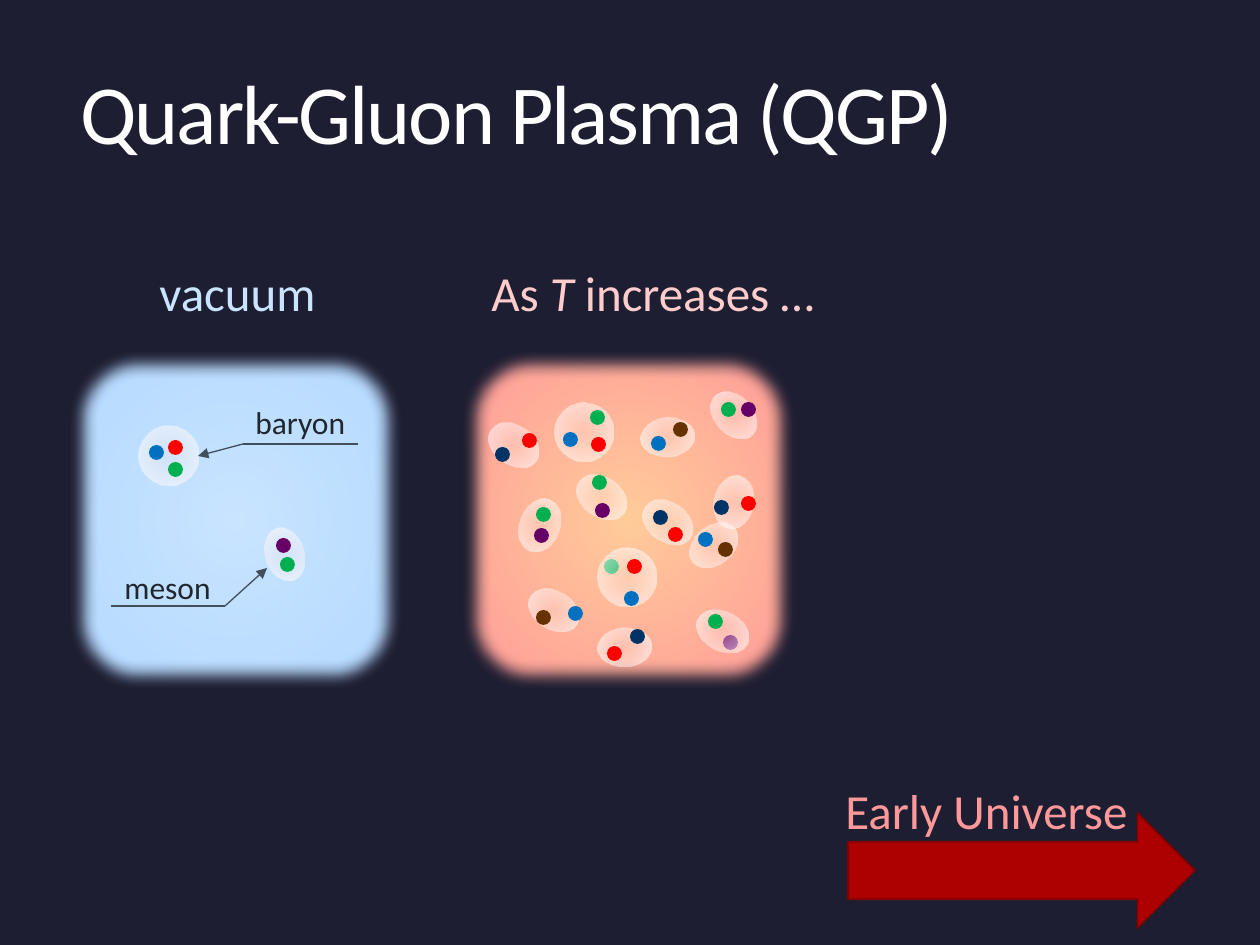
import pptx
import pptx.dml.color
import pptx.enum.shapes
import pptx.enum.text
import pptx.oxml
import pptx.oxml.ns
import pptx.util
from dataclasses import dataclass

PX = 914400 / 126
SHAPE = pptx.enum.shapes.MSO_SHAPE
ANCHOR = pptx.enum.text.MSO_ANCHOR


@dataclass(frozen=True)
class Theme:
    font: str = "Calibri"
    title_size: int = 48
    heading_size: int = 28
    label_size: int = 18
    background: str = "1E1E32"
    title: str = "FFFFFF"
    label: str = "21272E"
    leader: str = "424E5B"
    cold: str = "C9E4FF"
    cold_edge: str = "B3D9FF"
    warm: str = "FFCC99"
    warm_edge: str = "FF9999"
    warm_heading: str = "FFCCCC"
    arrow: str = "AD0101"
    arrow_line: str = "800101"
    hadron: str = "FFEEEE"
    hadron_edge: str = "FFFFFF"
    red: str = "FF0000"
    green: str = "00B050"
    blue: str = "0070C0"
    purple: str = "660066"
    navy: str = "003366"
    brown: str = "663300"


THEME = Theme()
PANEL_SIZE = (334, 340)
BARYON_SIZE = (59, 59)
MESON_SIZE = (39, 54)
QUARK_SIZE = (15, 15)


def emu(*lengths):
    return [round(length * PX) for length in lengths]


def rgb(code):
    return pptx.dml.color.RGBColor.from_string(code)


def add_text(slide, text, box, *, size, color, wrap=False, anchor=ANCHOR.TOP,
             tracking=None, line_spacing=None):
    """Add one paragraph; text is a string or a list of (string, italic) pairs."""
    frame = slide.shapes.add_textbox(*emu(*box)).text_frame
    frame.word_wrap = wrap
    frame.vertical_anchor = anchor
    paragraph = frame.paragraphs[0]
    if line_spacing:
        paragraph.line_spacing = line_spacing
    for content, italic in [(text, False)] if isinstance(text, str) else text:
        run = paragraph.add_run()
        run.text = content
        run.font.name = THEME.font
        run.font.size = pptx.util.Pt(size)
        run.font.italic = italic
        run.font.color.rgb = rgb(color)
        if tracking:
            run.font._element.set("spc", str(round(tracking * 100)))


def add_solid(slide, kind, box, color, outline=None):
    shape = slide.shapes.add_shape(kind, *emu(*box))
    shape.shadow.inherit = False
    shape.fill.solid()
    shape.fill.fore_color.rgb = rgb(color)
    if outline:
        shape.line.color.rgb = rgb(outline)
        shape.line.width = pptx.util.Pt(1)
    else:
        shape.line.fill.background()
    return shape


def add_radial(slide, kind, box, stops):
    """Add a shape shaded outward from its centre by (position, colour, opacity) stops."""
    shape = add_solid(slide, kind, box, stops[0][1])
    stop_xml = "".join(
        f'<a:gs pos="{position * 1000}"><a:srgbClr val="{color}">'
        f'<a:alpha val="{opacity * 1000}"/></a:srgbClr></a:gs>'
        for position, color, opacity in stops)
    gradient = pptx.oxml.parse_xml(
        f'<a:gradFill {pptx.oxml.ns.nsdecls("a")} rotWithShape="1">'
        f'<a:gsLst>{stop_xml}</a:gsLst><a:path path="circle">'
        '<a:fillToRect l="50000" t="50000" r="50000" b="50000"/></a:path></a:gradFill>')
    properties = shape._element.spPr
    properties.replace(properties.find(pptx.oxml.ns.qn("a:solidFill")), gradient)
    return shape


def add_line(slide, start, end, arrowhead=False):
    line = slide.shapes.add_connector(
        pptx.enum.shapes.MSO_CONNECTOR.STRAIGHT, *emu(*start, *end))
    line.line.color.rgb = rgb(THEME.leader)
    line.line.width = pptx.util.Pt(0.75)
    namespace = pptx.oxml.ns.nsdecls("a")
    if arrowhead:
        line.line._get_or_add_ln().append(
            pptx.oxml.parse_xml(f'<a:tailEnd {namespace} type="triangle"/>'))
    line._element.spPr.append(pptx.oxml.parse_xml(f"<a:effectLst {namespace}/>"))


def add_panel(slide, origin, center, edge):
    panel = add_radial(slide, SHAPE.ROUNDED_RECTANGLE, (*origin, *PANEL_SIZE),
                       [(0, center, 100), (98, edge, 100)])
    effects = panel._element.spPr.find(pptx.oxml.ns.qn("a:effectLst"))
    effects.append(pptx.oxml.parse_xml(
        f'<a:softEdge {pptx.oxml.ns.nsdecls("a")} rad="112500"/>'))


def add_hadron(slide, origin, place, size, rotation=0):
    left, top = origin[0] + place[0], origin[1] + place[1]
    shape = add_radial(slide, SHAPE.OVAL, (left, top, *size),
                       [(0, THEME.hadron, 25), (100, THEME.hadron_edge, 70)])
    shape.rotation = rotation


def add_quarks(slide, origin, places_by_color):
    for color, places in places_by_color.items():
        for x, y in places:
            add_solid(slide, SHAPE.OVAL,
                      (origin[0] + x, origin[1] + y, *QUARK_SIZE), color)


def add_callout(slide, origin, text, text_box, points):
    """Label a hadron with an underline from points[0] and a leader to points[-1]."""
    def shift(point):
        return origin[0] + point[0], origin[1] + point[1]

    far, near, target = map(shift, points)
    add_text(slide, text, (*shift(text_box), *text_box[2:]),
             size=THEME.label_size, color=THEME.label)
    add_line(slide, far, near)
    add_line(slide, near, target, arrowhead=True)


def add_vacuum(slide, origin):
    add_panel(slide, origin, THEME.cold, THEME.cold_edge)
    add_text(slide, "vacuum", (origin[0] + 79, origin[1] - 94, 181, 72),
             size=THEME.heading_size, color=THEME.cold)
    add_hadron(slide, origin, (71, 76), BARYON_SIZE)
    add_hadron(slide, origin, (197, 177), MESON_SIZE, 341.4)
    add_quarks(slide, origin, {
        THEME.red: [(100, 90)],
        THEME.green: [(100, 112), (212, 207)],
        THEME.blue: [(81, 95)],
        THEME.purple: [(208, 188)],
    })
    add_callout(slide, origin, "baryon", (175, 47, 115, 50),
                [(290, 94), (175, 94), (130, 106)])
    add_callout(slide, origin, "meson", (44, 212, 112, 50),
                [(43, 256), (157, 256), (199, 218)])


def add_hot_matter(slide, origin):
    add_panel(slide, origin, THEME.warm, THEME.warm_edge)
    add_text(slide, [("As", False), (" T ", True), ("increases …", False)],
             (origin[0] + 17, origin[1] - 94, 359, 72),
             size=THEME.heading_size, color=THEME.warm_heading)
    add_quarks(slide, origin, {THEME.green: [(142, 209)], THEME.purple: [(261, 285)]})
    for place in [(92, 53), (135, 198)]:
        add_hadron(slide, origin, place, BARYON_SIZE)
    for x, y, rotation in [
            (58, 148, 20.5), (186, 60, 84.8), (186, 145, 304.3), (72, 233, 122.2),
            (252, 125, 10.2), (241, 254, 298.4), (232, 168, 50.7), (32, 68, 304.3),
            (120, 120, 304.3), (252, 38, 315.7), (143, 270, 86.5)]:
        add_hadron(slide, origin, (x, y), MESON_SIZE, rotation)
    add_quarks(slide, origin, {
        THEME.red: [(129, 87), (145, 296), (165, 209), (60, 83), (206, 177), (279, 146)],
        THEME.blue: [(101, 82), (162, 241), (106, 256), (189, 86), (236, 182)],
        THEME.green: [(246, 264), (128, 60), (74, 157), (130, 125), (259, 52)],
        THEME.navy: [(191, 160), (33, 97), (252, 150), (168, 279)],
        THEME.brown: [(74, 260), (256, 192), (211, 72)],
        THEME.purple: [(72, 178), (133, 153), (279, 52)],
    })


def add_early_universe(slide, origin):
    left, top = origin
    add_solid(slide, SHAPE.RIGHT_ARROW, (left + 15, top + 39, 347, 115),
              THEME.arrow, THEME.arrow_line)
    add_text(slide, "Early Universe", (left, top, 307, 72),
             size=THEME.heading_size, color=THEME.warm_edge)


def main():
    presentation = pptx.Presentation()
    presentation.slide_width, presentation.slide_height = emu(1260, 945)
    slide = presentation.slides.add_slide(presentation.slide_layouts[6])
    slide.background.fill.solid()
    slide.background.fill.fore_color.rgb = rgb(THEME.background)
    add_text(slide, "Quark-Gluon Plasma (QGP)", (68, 2, 1114, 231),
             size=THEME.title_size, color=THEME.title, wrap=True,
             anchor=ANCHOR.MIDDLE, tracking=-1.2, line_spacing=0.9)
    add_vacuum(slide, (68, 350))
    add_hot_matter(slide, (462, 350))
    add_early_universe(slide, (833, 774))
    presentation.save("out.pptx")


if __name__ == "__main__":
    main()
